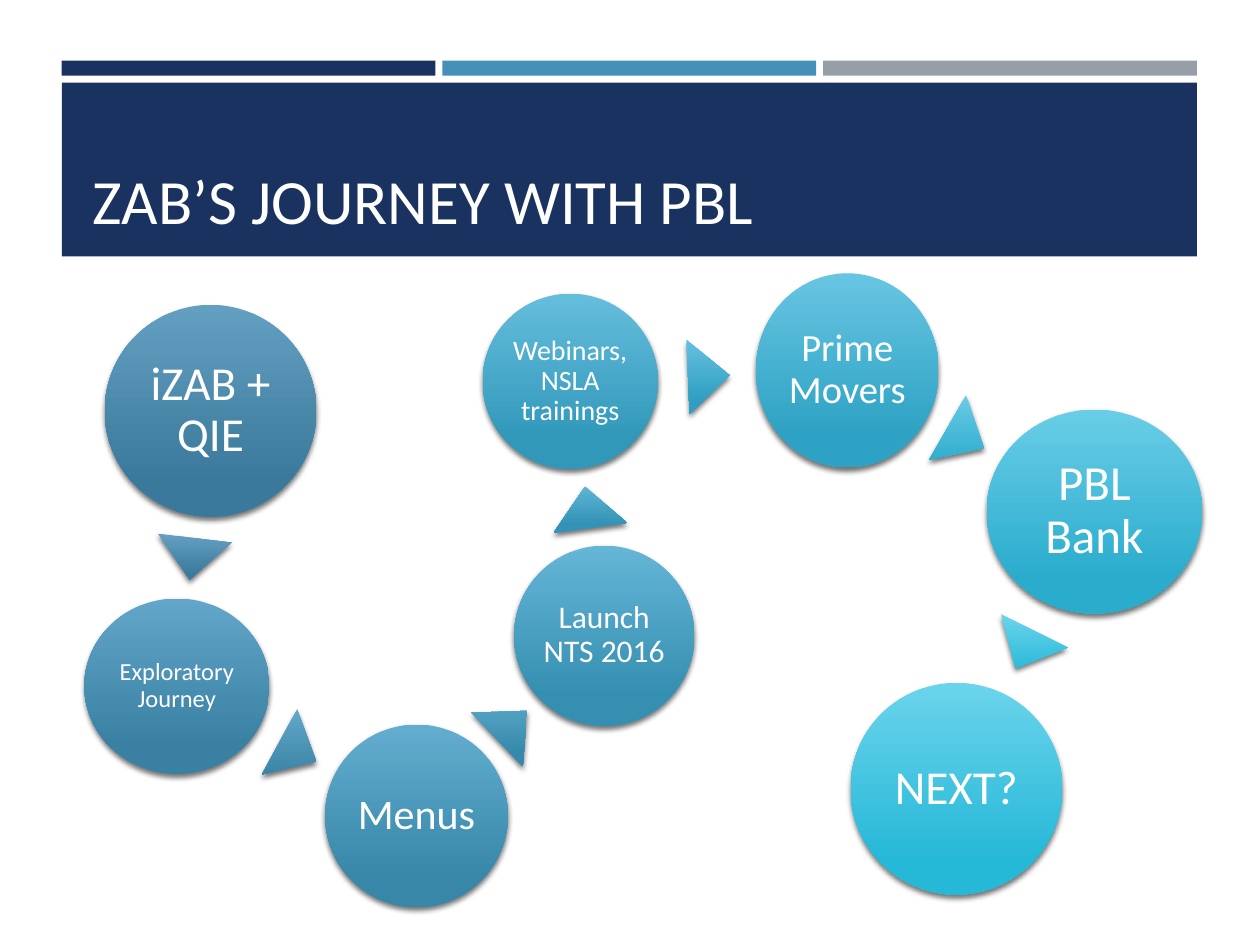
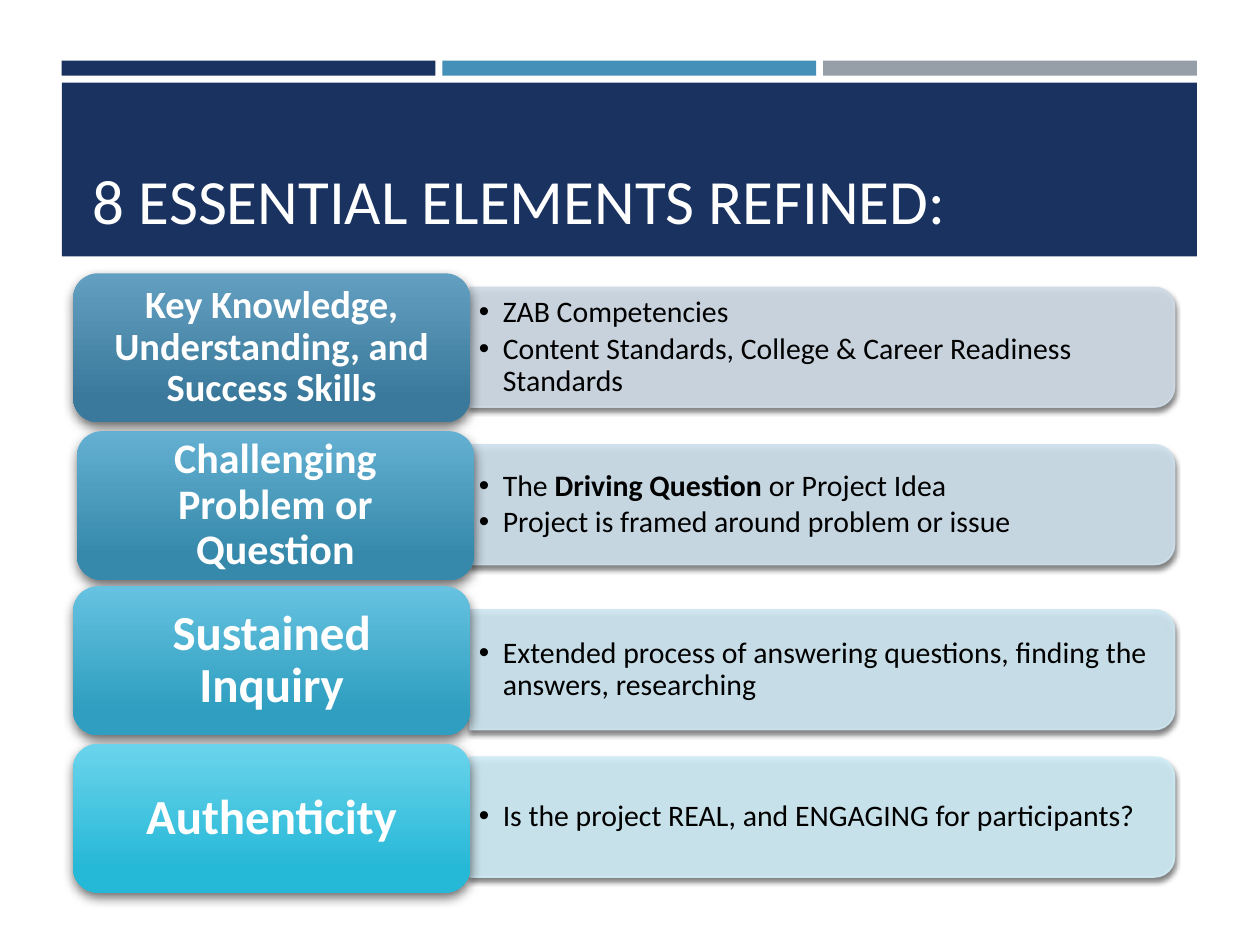
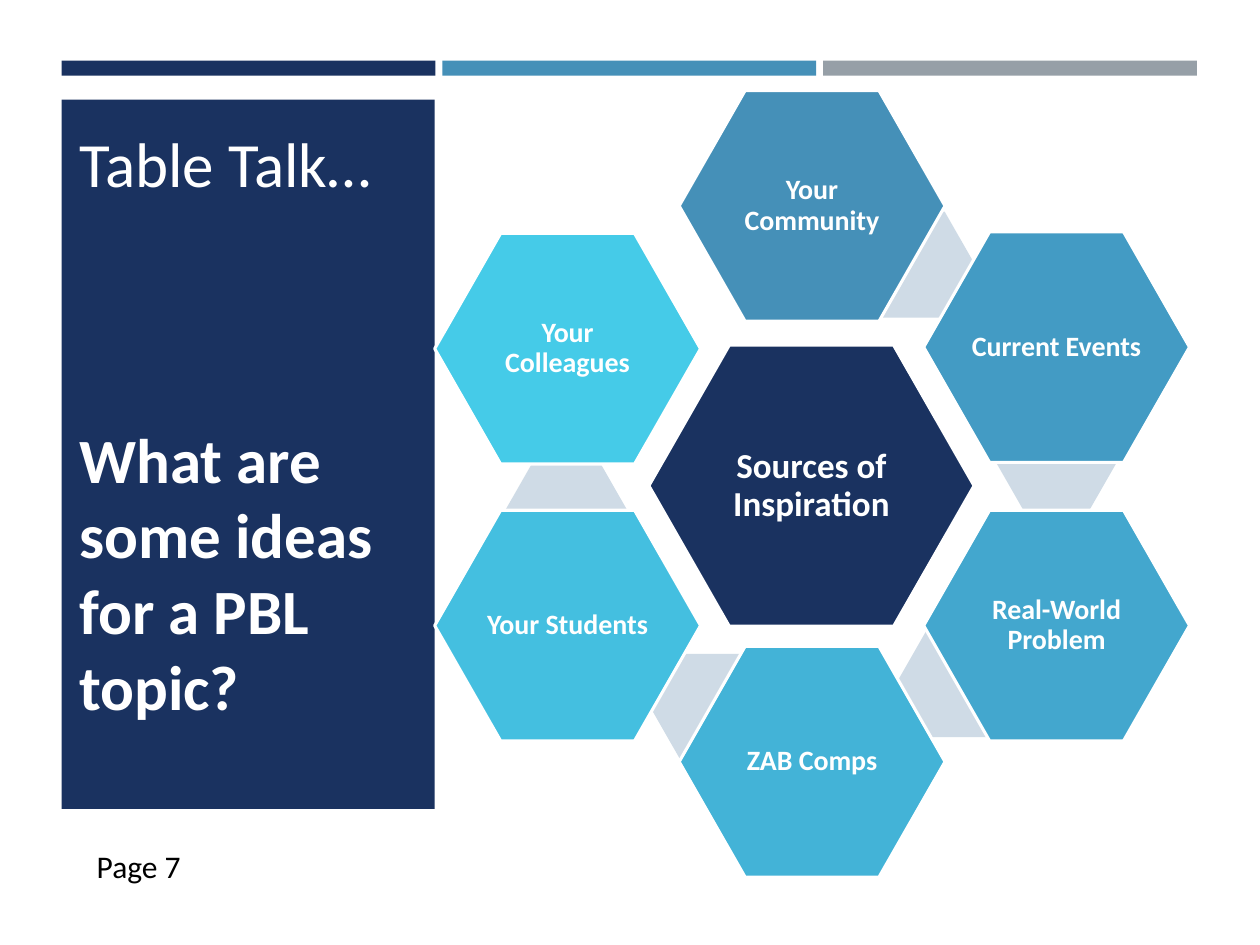
from lxml.etree import SubElement
from pptx import Presentation
from pptx.dml.color import RGBColor
from pptx.enum.shapes import MSO_SHAPE
from pptx.enum.text import MSO_ANCHOR, PP_ALIGN
from pptx.oxml.ns import qn
from pptx.util import Pt

FONT = "Calibri"
NAVY, BLUE, GREY, PALE = "1A3260", "4590B8", "969FA7", "CFDBE6"
WHITE, BLACK = "FFFFFF", "000000"
LEFT, CONTENT_WIDTH, STRIPE_GAP = 35.3, 648.7, 4

JOURNEY_TITLE = "ZAB’S JOURNEY WITH PBL"
STEPS = [
    ("iZAB + QIE", (59.8, 174.2, 121, 121), 27, ("639FC1", "3A799B")),
    ("Exploratory Journey", (48.2, 342, 105.8, 100.1), 14, ("62A6C9", "3980A2")),
    ("Menus", (185.8, 414, 104.4, 104.4), 24, ("63AED0", "3887A8")),
    ("Launch NTS 2016", (293.8, 311.8, 103, 103), 18, ("64B5D6", "358FB1")),
    ("Webinars, NSLA trainings", (275.8, 167.8, 100.1, 100.1), 16, ("65BDDC", "3198BA")),
    ("Prime Movers", (432, 156.2, 104.4, 110.9), 22, ("67C5E2", "2EA2C4")),
    ("PBL Bank", (563.8, 234, 123.1, 116.6), 28, ("69CDE7", "2AACCD")),
    ("NEXT?", (486, 390.2, 121, 121), 27, ("6BD4EC", "26B8D7")),
]
ARROW_SIZE = (42.5, 23.8)
ARROWS = [
    ((88.6, 307.4), 186.9, ("639FC1", "3A799B")),
    ((149, 417.6), 118.3, ("62A8CA", "3881A3")),
    ((271.4, 402.5), 46.3, ("63B0D2", "3789AB")),
    ((314.6, 277.9), 352.4, ("65B9D9", "3393B6")),
    ((383.8, 203), 87.6, ("66C2E0", "2F9EC0")),
    ((530.6, 238.3), 119.7, ("69CBE6", "2BAACC")),
    ((564.5, 359.3), 206.6, ("6BD4EC", "26B8D7")),
]

ELEMENTS_TITLE = "8 ESSENTIAL ELEMENTS REFINED:"
ELEMENTS = [
    ("Key Knowledge, Understanding, and Success Skills", 22, (41.8, 156.2), 198.4,
     ("639FC1", "3A799B"), "CFDBE6",
     ["ZAB Competencies", "Content Standards, College & Career Readiness Standards"]),
    ("Challenging Problem or Question", 24, (44, 246.4), 288.4,
     ("63B0D2", "3789AB"), "CEE0EC",
     [[("The ", False), ("Driving Question ", True), ("or Project Idea", False)],
      "Project is framed around problem or issue"]),
    ("Sustained Inquiry", 28, (41.8, 335), 382.7,
     ("66C2E0", "2F9EC0"), "CEE6F1",
     ["Extended process of answering questions, finding the answers, researching"]),
    ("Authenticity", 28, (41.8, 425), 466.9,
     ("6BD4EC", "26B8D7"), "CFECF6",
     ["Is the project REAL, and ENGAGING for participants?"]),
]
LABEL_SIZE = (226.8, 85)
PANEL_LEFT, PANEL_LENGTH, PANEL_DEPTH = 268.6, 402.5, 68.4

PROMPT = ["Table Talk…", [("What are some ideas for a PBL topic?", True)]]
PAGE_LABEL = "Page 7"
HUB = ("Sources of Inspiration", (370.8, 197.3, 185.8, 160.6))
SOURCE_SIZE = (151.9, 131.8)
SOURCES = [
    ("Your Community", (388.1, 51.8), "4590B8"),
    ("Current Events", (527.8, 132.5), "439BC4"),
    ("Real-World Problem", (527.8, 291.6), "43A7CE"),
    ("ZAB Comps", (388.1, 369.4), "43B3D7"),
    ("Your Students", (248.4, 291.6), "44BFE0"),
    ("Your Colleagues", (248.4, 133.4), "45CBE8"),
]
LINK_SIZE = (69.8, 60.5)
LINKS = [(487.4, 121), (568.8, 233.3), (511.9, 360.7), (371.5, 373.7), (288.7, 261.4)]


def rgb(code):
    return RGBColor.from_string(code)


def add_alpha(color, percent):
    SubElement(color, qn("a:alpha")).set("val", str(percent * 1000))


def add_shadow(shape, alpha, blur, distance, angle):
    effects = shape._element.spPr.find(qn("a:effectLst"))
    shadow = SubElement(effects, qn("a:outerShdw"), blurRad=str(Pt(blur)),
                        dist=str(Pt(distance)), dir=str(angle * 60000), rotWithShape="0")
    color = SubElement(shadow, qn("a:srgbClr"), val=BLACK)
    add_alpha(color, alpha)


def draw(slide, preset, box, fill, line=None, width=1, rotation=0, shadow=None, alpha=None):
    shape = slide.shapes.add_shape(preset, *map(Pt, box))
    shape.rotation = rotation
    shape.shadow.inherit = False
    if isinstance(fill, tuple):
        shape.fill.gradient()
        shape.fill.gradient_angle = 270
        for stop, code, position in zip(shape.fill.gradient_stops, fill, (0, 0.84)):
            stop.color.rgb = rgb(code)
            stop.position = position
        shape._element.spPr.find(qn("a:gradFill")).set("rotWithShape", "0")
    else:
        shape.fill.solid()
        shape.fill.fore_color.rgb = rgb(fill)
    if line:
        shape.line.color.rgb = rgb(line)
        shape.line.width = Pt(width)
    else:
        shape.line.fill.background()
    if alpha:
        for color in shape._element.spPr.iter(qn("a:srgbClr")):
            add_alpha(color, alpha)
    if shadow:
        add_shadow(shape, *shadow)
    return shape


def write(shape, paragraphs, size, color=WHITE, bold=False, align=PP_ALIGN.CENTER,
          anchor=MSO_ANCHOR.MIDDLE, inset=(7.2, 3.6), spacing=0.9, gap=0, bullet=None):
    frame = shape.text_frame
    frame.word_wrap = True
    frame.vertical_anchor = anchor
    frame.margin_left = frame.margin_right = Pt(inset[0])
    frame.margin_top = frame.margin_bottom = Pt(inset[1])
    for index, content in enumerate(paragraphs):
        paragraph = frame.add_paragraph() if index else frame.paragraphs[0]
        paragraph.alignment = align
        paragraph.line_spacing = spacing
        if index:
            paragraph.space_before = Pt(gap)
        if bullet:
            properties = paragraph._p.get_or_add_pPr()
            properties.set("marL", str(Pt(13.7)))
            properties.set("indent", str(Pt(-13.7)))
            SubElement(properties, qn("a:buFont"), typeface="Arial")
            SubElement(properties, qn("a:buChar"), char=bullet)
        for words, strong in [(content, bold)] if isinstance(content, str) else content:
            run = paragraph.add_run()
            run.text = words
            run.font.name = FONT
            run.font.size = Pt(size)
            run.font.bold = strong
            run.font.color.rgb = rgb(color)


def add_text(slide, box, paragraphs, size, **form):
    write(slide.shapes.add_textbox(*map(Pt, box)), paragraphs, size,
          **{"align": PP_ALIGN.LEFT, "spacing": 1, **form})


def start_slide(deck, title=None):
    slide = deck.slides.add_slide(deck.slide_layouts[6])
    stripe = (CONTENT_WIDTH - 2 * STRIPE_GAP) / 3
    for column, color in enumerate((NAVY, BLUE, GREY)):
        left = LEFT + column * (stripe + STRIPE_GAP)
        draw(slide, MSO_SHAPE.RECTANGLE, (left, 34.6, stripe, 8.6), color)
    if title:
        draw(slide, MSO_SHAPE.RECTANGLE, (LEFT, 47.3, CONTENT_WIDTH, 99.2), NAVY)
        add_text(slide, (46, 54, 629.3, 85), [title], 36, anchor=MSO_ANCHOR.BOTTOM)
    return slide


def build_journey(deck):
    slide = start_slide(deck, JOURNEY_TITLE)
    soft = (55, 3, 2, 90)
    for words, box, size, shades in STEPS:
        circle = draw(slide, MSO_SHAPE.OVAL, box, shades, shadow=soft)
        write(circle, [words], size, inset=(size / 10, size / 10))
    for place, rotation, shades in ARROWS:
        draw(slide, MSO_SHAPE.ISOSCELES_TRIANGLE, place + ARROW_SIZE, shades,
             rotation=rotation, shadow=soft)


def build_elements(deck):
    slide = start_slide(deck, ELEMENTS_TITLE)
    for name, size, place, middle, shades, tint, details in ELEMENTS:
        panel = (PANEL_LEFT + (PANEL_LENGTH - PANEL_DEPTH) / 2, middle - PANEL_LENGTH / 2,
                 PANEL_DEPTH, PANEL_LENGTH)
        draw(slide, MSO_SHAPE.ROUND_2_SAME_RECTANGLE, panel, tint, line=tint,
             rotation=90, shadow=(55, 3, 2, 90), alpha=90)
        add_text(slide, (PANEL_LEFT, middle - 30.6, 399.6, 61.2), details, 17, color=BLACK,
                 inset=(5, 2.9), spacing=0.9, gap=2.55, bullet="•")
        label = draw(slide, MSO_SHAPE.ROUNDED_RECTANGLE, place + LABEL_SIZE, shades,
                     shadow=(60, 7, 3, 84))
        write(label, [name], size, bold=True, inset=(size * 0.3, size * 0.15))


def add_hexagon(slide, box, fill, line=None):
    hexagon = draw(slide, MSO_SHAPE.HEXAGON, box, fill, line=line, width=1.75)
    hexagon.adjustments[0] = 0.286
    return hexagon


def build_table_talk(deck):
    slide = start_slide(deck)
    draw(slide, MSO_SHAPE.RECTANGLE, (LEFT, 56.9, 213.1, 405.4), NAVY)
    hub, hub_box = HUB
    write(add_hexagon(slide, hub_box, NAVY, WHITE), [hub], 20, bold=True, inset=(2, 2))
    for place in LINKS:
        add_hexagon(slide, place + LINK_SIZE, PALE)
    for words, place, color in SOURCES:
        source = add_hexagon(slide, place + SOURCE_SIZE, color, WHITE)
        write(source, [words], 16, bold=True, inset=(1.5, 1.5))
    add_text(slide, (38.2, 67.4, 215.3, 389), PROMPT, 36, anchor=MSO_ANCHOR.TOP, gap=126)
    add_text(slide, (48.2, 480.2, 246.2, 29), [PAGE_LABEL], 18, color=BLACK,
             anchor=MSO_ANCHOR.TOP)


def main():
    deck = Presentation()
    deck.slide_width, deck.slide_height = Pt(720), Pt(540)
    build_journey(deck)
    build_elements(deck)
    build_table_talk(deck)
    deck.save("out.pptx")


if __name__ == "__main__":
    main()
